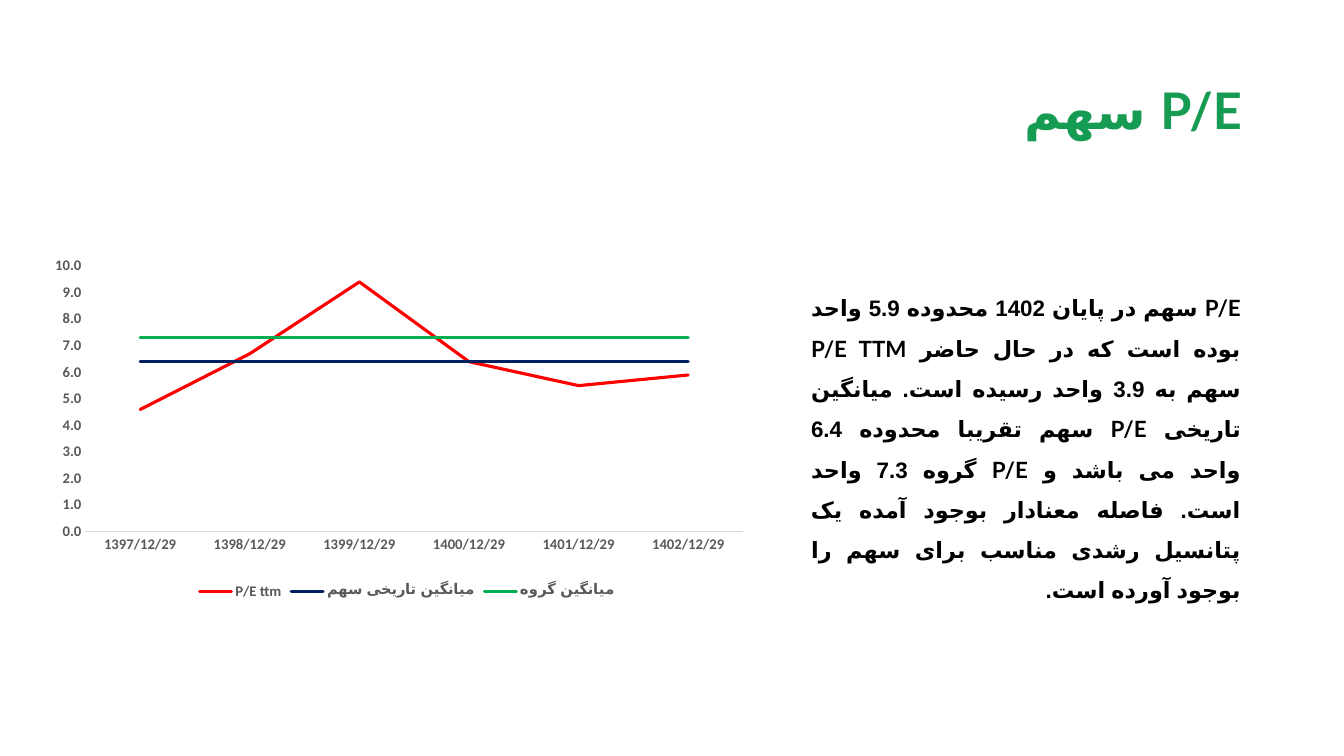
"""Builds a slide comparing a share's P/E with its historical and group averages."""
from lxml.etree import SubElement
from pptx import Presentation
from pptx.chart.data import CategoryChartData
from pptx.dml.color import RGBColor
from pptx.enum.chart import XL_CHART_TYPE, XL_LEGEND_POSITION, XL_MARKER_STYLE, XL_TICK_MARK
from pptx.enum.lang import MSO_LANGUAGE_ID
from pptx.enum.text import MSO_ANCHOR, MSO_AUTO_SIZE, PP_ALIGN
from pptx.oxml.ns import qn
from pptx.util import Cm, Pt

TITLE = "P/E سهم"
BODY = (
    "P/E سهم در پایان 1402 محدوده 5.9 واحد بوده است که در حال حاضر P/E TTM سهم "
    "به 3.9 واحد رسیده است. میانگین تاریخی P/E سهم تقریبا محدوده 6.4 واحد می باشد "
    "و P/E گروه 7.3 واحد است. فاصله معنادار بوجود آمده یک پتانسیل رشدی مناسب برای "
    "سهم را بوجود آورده است."
)
DATES = [f"{year}/12/29" for year in range(1397, 1403)]
SERIES = [
    ("P/E ttm", [4.6, 6.7, 9.4, 6.4, 5.5, 5.9], "red"),
    ("میانگین تاریخی سهم", [6.4] * len(DATES), "navy"),
    ("میانگین گروه", [7.3] * len(DATES), "green"),
]
COLORS = {
    "title": "169B52", "body": "000000", "label": "595959", "axis": "D9D9D9",
    "red": "FF0000", "navy": "002060", "green": "00B050",
}
BOXES = {
    "title": (2.34, 1.02, 29.21, 3.68),
    "body": (20.19, 6.96, 11.33, 12.09),
    "chart": (0.81, 5.21, 18.9, 10.03),
}
PLOT = {"x": 0.071, "y": 0.149, "w": 0.877, "h": 0.668}
FONTS = {
    "title": {"name": "Lato", "size": Pt(36), "bold": True},
    "body": {"name": "Lato", "size": Pt(16), "bold": True},
    "label": {"name": "Calibri", "size": Pt(10.5), "bold": True},
}
PERSIAN_FONT = "Arial"
PARAGRAPHS = {
    "title": {"alignment": PP_ALIGN.RIGHT, "line_spacing": 0.9},
    "body": {"alignment": PP_ALIGN.JUSTIFY, "line_spacing": 1.5},
}
FRAMES = {
    "title": {"vertical_anchor": MSO_ANCHOR.MIDDLE},
    "body": {"vertical_anchor": MSO_ANCHOR.TOP},
}
VALUE_AXIS = {
    "minimum_scale": 0, "maximum_scale": 10, "major_unit": 1,
    "has_major_gridlines": False,
}


def box(name):
    return [Cm(length) for length in BOXES[name]]


def apply(target, values):
    for attribute, value in values.items():
        setattr(target, attribute, value)


def style_font(font, name):
    apply(font, FONTS[name])
    font.color.rgb = RGBColor.from_string(COLORS[name])


def write_text(shape, name, text):
    frame = shape.text_frame
    apply(frame, {"word_wrap": True, "auto_size": MSO_AUTO_SIZE.NONE, **FRAMES[name]})
    paragraph = frame.paragraphs[0]
    apply(paragraph, PARAGRAPHS[name])
    paragraph._p.get_or_add_pPr().set("rtl", "1")
    run = paragraph.add_run()
    run.text = text
    style_font(run.font, name)
    run.font.language_id = MSO_LANGUAGE_ID.FARSI
    SubElement(run._r.get_or_add_rPr(), qn("a:cs")).set("typeface", PERSIAN_FONT)


def place_plot(chart):
    plot_area = chart._chartSpace.chart.plotArea
    layout = plot_area.find(qn("c:layout"))
    if layout is None:
        layout = SubElement(plot_area, qn("c:layout"))
        plot_area.insert(0, layout)
    manual = SubElement(layout, qn("c:manualLayout"))
    settings = {"layoutTarget": "inner", "xMode": "edge", "yMode": "edge", **PLOT}
    for tag, value in settings.items():
        SubElement(manual, qn(f"c:{tag}")).set("val", str(value))


def add_line_chart(slide):
    data = CategoryChartData(number_format="0.0")
    data.categories = DATES
    for name, values, _ in SERIES:
        data.add_series(name, values)
    chart = slide.shapes.add_chart(XL_CHART_TYPE.LINE, *box("chart"), data).chart
    apply(chart, {"has_title": False, "has_legend": True})
    style_font(chart.font, "label")
    apply(chart.legend, {"position": XL_LEGEND_POSITION.BOTTOM, "include_in_layout": False})
    style_font(chart.legend.font, "label")
    chart.plots[0].vary_by_categories = False
    for series, (_, _, color) in zip(chart.plots[0].series, SERIES):
        series.smooth = False
        series.marker.style = XL_MARKER_STYLE.NONE
        series.format.line.width = Pt(2.25)
        series.format.line.color.rgb = RGBColor.from_string(COLORS[color])
        series._element.spPr.find(qn("a:ln")).set("cap", "rnd")
    for axis in (chart.category_axis, chart.value_axis):
        apply(axis, {"major_tick_mark": XL_TICK_MARK.NONE, "minor_tick_mark": XL_TICK_MARK.NONE})
        style_font(axis.tick_labels.font, "label")
    apply(chart.value_axis, VALUE_AXIS)
    apply(chart.value_axis.tick_labels, {"number_format": "0.0", "number_format_is_linked": False})
    chart.value_axis.format.line.fill.background()
    chart.category_axis.format.line.width = Pt(0.75)
    chart.category_axis.format.line.color.rgb = RGBColor.from_string(COLORS["axis"])
    place_plot(chart)


def main():
    presentation = Presentation()
    apply(presentation, {"slide_width": Cm(33.87), "slide_height": Cm(19.05)})
    slide = presentation.slides.add_slide(presentation.slide_layouts[5])
    title = slide.shapes.title
    apply(title, dict(zip(("left", "top", "width", "height"), box("title"))))
    write_text(title, "title", TITLE)
    write_text(slide.shapes.add_textbox(*box("body")), "body", BODY)
    add_line_chart(slide)
    presentation.save("out.pptx")


if __name__ == "__main__":
    main()
